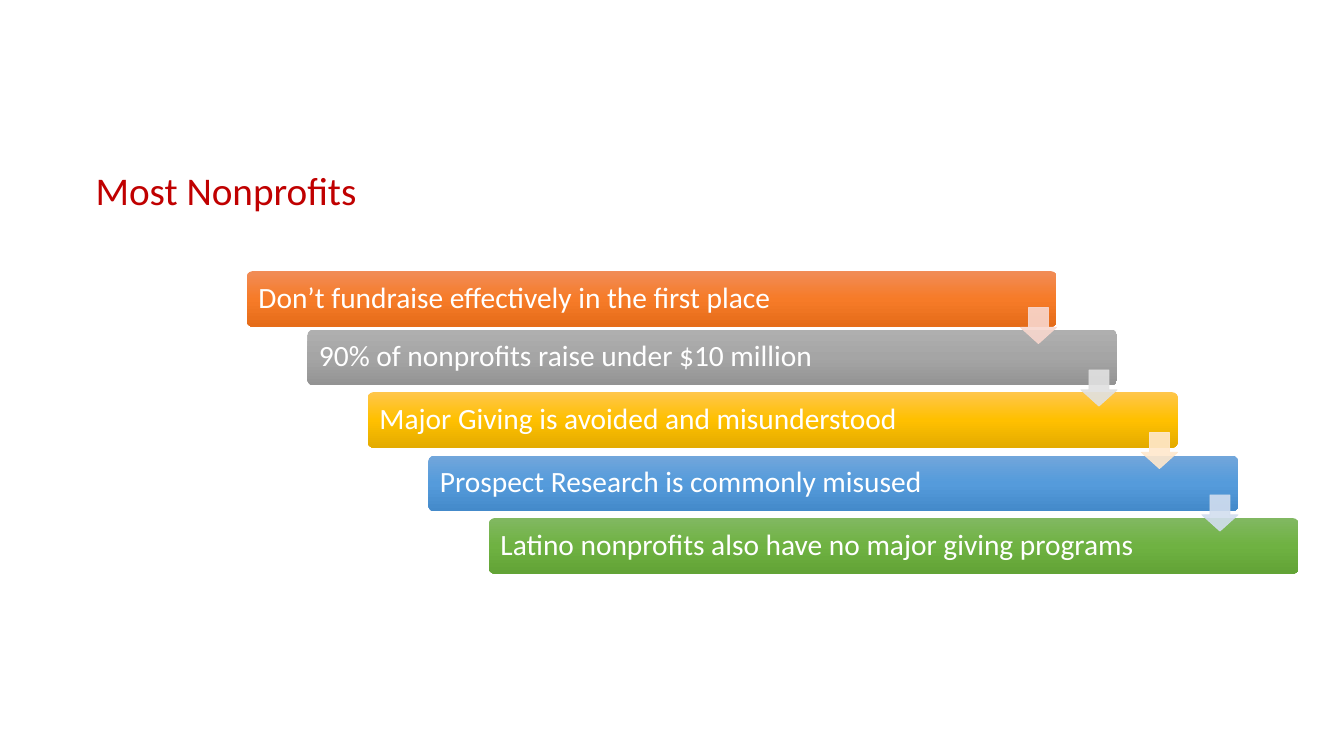
from lxml import etree
from pptx import Presentation
from pptx.dml.color import RGBColor
from pptx.enum.shapes import MSO_SHAPE
from pptx.enum.text import MSO_ANCHOR, PP_ALIGN
from pptx.oxml import parse_xml
from pptx.oxml.ns import nsdecls, qn
from pptx.util import Inches, Pt

ROUNDED = MSO_SHAPE.ROUNDED_RECTANGLE
DOWN_ARROW = MSO_SHAPE.DOWN_ARROW
MIDDLE = MSO_ANCHOR.MIDDLE
LEFT = PP_ALIGN.LEFT

WHITE = RGBColor(0xFF, 0xFF, 0xFF)
RED = RGBColor(0xC0, 0x00, 0x00)
ORANGES = [RGBColor(0xF1, 0x8C, 0x57), RGBColor(0xF6, 0x7B, 0x28), RGBColor(0xE5, 0x6C, 0x19)]
GREYS = [RGBColor(0xAF, 0xAF, 0xAF), RGBColor(0xA5, 0xA5, 0xA5), RGBColor(0x93, 0x93, 0x93)]
GOLDS = [RGBColor(0xFF, 0xC6, 0x4B), RGBColor(0xFF, 0xC0, 0x00), RGBColor(0xE3, 0xAB, 0x00)]
BLUES = [RGBColor(0x71, 0xA6, 0xDB), RGBColor(0x55, 0x9B, 0xDB), RGBColor(0x44, 0x8A, 0xCA)]
GREENS = [RGBColor(0x81, 0xB8, 0x61), RGBColor(0x6F, 0xB2, 0x42), RGBColor(0x62, 0xA3, 0x36)]
ARROW_COLORS = [RGBColor(0xF8, 0xD7, 0xCE), RGBColor(0xE1, 0xE1, 0xE1),
                RGBColor(0xFF, 0xE8, 0xCC), RGBColor(0xD2, 0xDE, 0xEF)]

# Staircase grid, in inches: each step moves right and down
STEP_X, STEP_Y = 0.6, 0.62
BAR_LEFT, BAR_WIDTH, BAR_HEIGHT = 2.45, 8.03, 0.55
ARROW_LEFT, ARROW_TOP, ARROW_SIZE = 10.12, 3.05, 0.36

# Statement, top of its bar, gradient from top to bottom
BARS = [
    ("Don’t fundraise effectively in the first place", 2.69, ORANGES),
    ("90% of nonprofits raise under $10 million", 3.27, GREYS),
    ("Major Giving is avoided and misunderstood", 3.89, GOLDS),
    ("Prospect Research is commonly misused", 4.52, BLUES),
    ("Latino nonprofits also have no major giving programs", 5.14, GREENS),
]


def write_text(shape, text, size, color, spacing=1.0, anchor=None):
    frame = shape.text_frame
    frame.word_wrap = True
    if anchor is not None:
        frame.vertical_anchor = anchor
    paragraph = frame.paragraphs[0]
    paragraph.alignment = LEFT
    paragraph.line_spacing = spacing
    run = paragraph.add_run()
    run.text = text
    run.font.name = "Calibri"
    run.font.size = Pt(size)
    run.font.color.rgb = color


def add_plain_shape(kind, left, top, width, height, adjustments):
    shape = slide.shapes.add_shape(kind, Inches(left), Inches(top), Inches(width), Inches(height))
    shape.shadow.inherit = False
    for index, value in enumerate(adjustments):
        shape.adjustments[index] = value
    return shape


presentation = Presentation()
presentation.slide_width = Inches(13.33)
presentation.slide_height = Inches(7.5)
slide = presentation.slides.add_slide(presentation.slide_layouts[6])

# Bars with a vertical three-stop gradient
for step, (statement, top, colors) in enumerate(BARS):
    bar = add_plain_shape(ROUNDED, BAR_LEFT + step * STEP_X, top, BAR_WIDTH, BAR_HEIGHT, [0.1])
    bar.line.fill.background()
    bar.fill.gradient()
    stops = "".join(
        f'<a:gs pos="{share * 1000}"><a:srgbClr val="{color}"/></a:gs>'
        for share, color in zip((0, 50, 100), colors)
    )
    gradient = parse_xml(
        f'<a:gradFill {nsdecls("a")} rotWithShape="1"><a:gsLst>{stops}</a:gsLst>'
        '<a:lin ang="5400000" scaled="0"/></a:gradFill>'
    )
    properties = bar.fill._xPr
    properties.replace(properties.find(qn("a:gradFill")), gradient)
    write_text(bar, statement, size=21, color=WHITE, spacing=0.9, anchor=MIDDLE)

# Translucent arrows between the steps
for step, color in enumerate(ARROW_COLORS):
    arrow = add_plain_shape(DOWN_ARROW, ARROW_LEFT + step * STEP_X, ARROW_TOP + step * STEP_Y,
                            ARROW_SIZE, ARROW_SIZE, [0.55, 0.45])
    arrow.fill.solid()
    arrow.fill.fore_color.rgb = color
    arrow.line.color.rgb = color
    arrow.line.width = Pt(0.5)
    for color_element in arrow.fill._xPr.iter(qn("a:srgbClr")):
        etree.SubElement(color_element, qn("a:alpha"), val="90000")

# Title
title = slide.shapes.add_textbox(Inches(0.85), Inches(1.6), Inches(6.82), Inches(0.57))
write_text(title, "Most Nonprofits", size=28, color=RED)

presentation.save("out.pptx")
